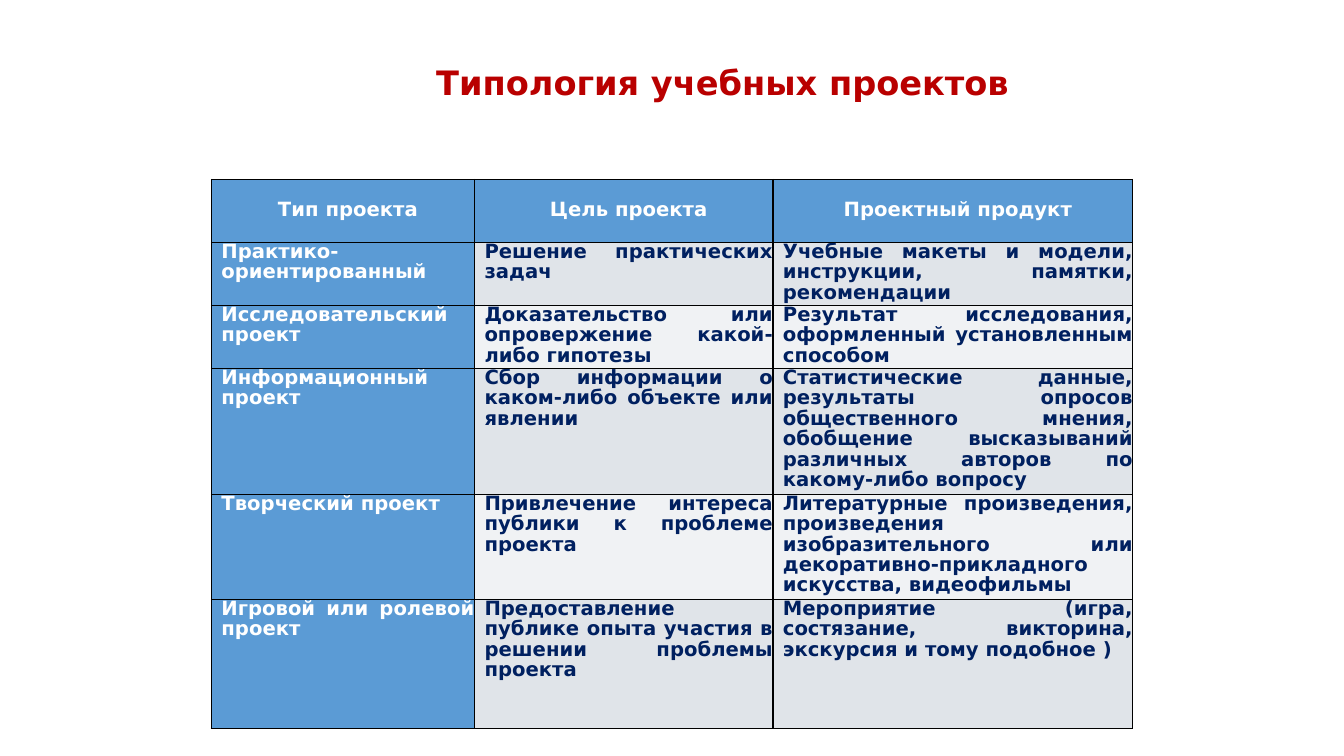
from lxml import etree
from pptx import Presentation
from pptx import util as u
from pptx.dml.color import RGBColor
from pptx.enum import text
from pptx.oxml import ns

TITLE = "Типология учебных проектов"
ROWS = [
    ("Тип проекта", "Цель проекта", "Проектный продукт"),
    ("Практико-ориентированный", "Решение практических задач",
     "Учебные макеты и модели, инструкции, памятки, рекомендации"),
    ("Исследовательский проект",
     "Доказательство или опровержение какой-либо гипотезы",
     "Результат исследования, оформленный установленным способом"),
    ("Информационный проект",
     "Сбор информации о каком-либо объекте или явлении",
     "Статистические данные, результаты опросов общественного мнения, "
     "обобщение высказываний различных авторов по какому-либо вопросу"),
    ("Творческий проект", "Привлечение интереса публики к проблеме проекта",
     "Литературные произведения, произведения изобразительного или "
     "декоративно-прикладного искусства, видеофильмы"),
    ("Игровой или ролевой проект",
     "Предоставление публике опыта участия в решении проблемы проекта",
     "Мероприятие (игра, состязание, викторина, экскурсия и тому подобное )"),
]
COLUMN_WIDTHS = (6.63, 7.52, 9.07)
ROW_HEIGHTS = (1.59, 1.59, 1.59, 3.17, 2.65, 3.25)
TABLE_LEFT, TABLE_TOP = 5.33, 4.52
COLORS = {"title": "B90000", "accent": "5B9BD5", "light": "FFFFFF",
          "dark": "002060", "odd": "E0E4E9", "even": "F0F2F4", "border": "000000"}
FONT = "DejaVu Sans"


def style(para, size, color, align, margin=0, indent=0):
    para.alignment = align
    para.line_spacing = u.Pt(14.6)
    para.font.name = FONT
    para.font.size = u.Pt(size)
    para.font.bold = True
    para.font.color.rgb = RGBColor.from_string(COLORS[color])
    properties = para._p.get_or_add_pPr()
    properties.set("marL", str(u.Cm(margin)))
    properties.set("indent", str(u.Cm(indent)))


def add_borders(cell):
    properties = cell._tc.get_or_add_tcPr()
    for position, side in enumerate(("lnL", "lnR", "lnT", "lnB")):
        line = etree.Element(ns.qn(f"a:{side}"), w=str(u.Pt(1)))
        fill = etree.SubElement(line, ns.qn("a:solidFill"))
        etree.SubElement(fill, ns.qn("a:srgbClr"), val=COLORS["border"])
        properties.insert(position, line)


def add_title(page):
    box = page.shapes.add_textbox(u.Cm(8.53), u.Cm(1.93), u.Cm(18.6), u.Cm(1.35))
    box.text_frame.word_wrap = True
    para = box.text_frame.paragraphs[0]
    para.text = TITLE
    style(para, 24, "title", text.PP_ALIGN.CENTER, indent=0.76)


def fill_cell(cell, words, row, column):
    header = row == 0
    accented = header or column == 0
    background = "accent" if accented else "odd" if row % 2 else "even"
    cell.fill.solid()
    cell.fill.fore_color.rgb = RGBColor.from_string(COLORS[background])
    add_borders(cell)
    cell.margin_left = cell.margin_right = cell.margin_top = cell.margin_bottom = 0
    cell.vertical_anchor = text.MSO_ANCHOR.MIDDLE if header else text.MSO_ANCHOR.TOP
    para = cell.text_frame.paragraphs[0]
    para.text = words
    align = text.PP_ALIGN.CENTER if header else text.PP_ALIGN.JUSTIFY
    style(para, 14, "light" if accented else "dark", align, margin=0.25)


def add_project_table(page):
    table = page.shapes.add_table(
        len(ROWS), len(COLUMN_WIDTHS), u.Cm(TABLE_LEFT), u.Cm(TABLE_TOP),
        u.Cm(sum(COLUMN_WIDTHS)), u.Cm(sum(ROW_HEIGHTS))).table
    for column, width in zip(table.columns, COLUMN_WIDTHS):
        column.width = u.Cm(width)
    for row, height in zip(table.rows, ROW_HEIGHTS):
        row.height = u.Cm(height)
    for row, entries in enumerate(ROWS):
        for column, words in enumerate(entries):
            fill_cell(table.cell(row, column), words, row, column)


def main():
    deck = Presentation()
    deck.slide_width, deck.slide_height = u.Cm(33.87), u.Cm(19.05)
    page = deck.slides.add_slide(deck.slide_layouts[6])
    add_project_table(page)
    add_title(page)
    deck.save("out.pptx")


if __name__ == "__main__":
    main()
